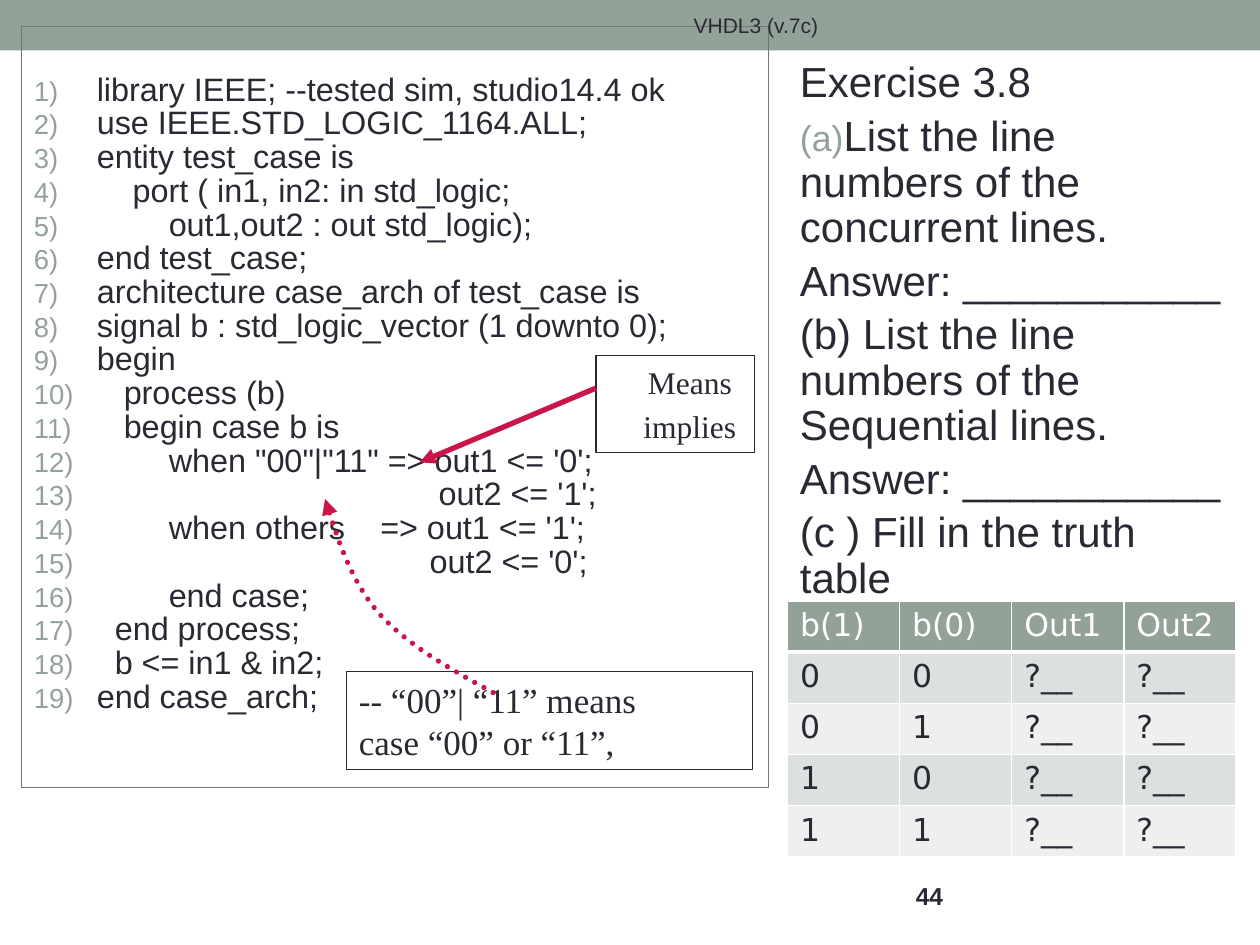
from lxml import etree
from pptx import Presentation
from pptx import util as u
from pptx.dml import color
from pptx.enum import dml, shapes, text
from pptx.oxml import ns

INK, SAGE, RED, WHITE = "292934", "93A299", "CB1549", "FFFFFF"
SPACE = 0.0714
CODE = [
    (0, "library IEEE; --tested sim, studio14.4 ok"),
    (0, "use IEEE.STD_LOGIC_1164.ALL;"),
    (0, "entity test_case is"),
    (4, "port ( in1, in2: in std_logic;"),
    (8, "out1,out2 : out std_logic);"),
    (0, "end test_case;"),
    (0, "architecture case_arch of test_case is"),
    (0, "signal b : std_logic_vector (1 downto 0);"),
    (0, "begin"),
    (3, "process (b)"),
    (3, "begin case b is"),
    (8, "when \"00\"|\"11\" => out1 <= '0';"),
    (38, "out2 <= '1';"),
    (8, "when others\t=> out1 <= '1';"),
    (37, "out2 <= '0';"),
    (8, "end case;"),
    (2, "end process;"),
    (2, "b <= in1 & in2;"),
    (0, "end case_arch;"),
]
EXERCISE = [
    "Exercise 3.8",
    "List the line numbers of the concurrent lines.",
    "Answer: ___________",
    "(b) List the line numbers of the Sequential lines.",
    "Answer: ___________",
    "(c ) Fill in the truth table",
]
TRUTH = [["b(1)", "b(0)", "Out1", "Out2"]] + [
    [b1, b0, "?__", "?__"] for b1 in "01" for b0 in "01"]
CURVES = [
    [(2.58, 3.96), (2.68, 4.28), (2.78, 4.6), (3, 4.86)],
    [(3, 4.86), (3.22, 5.11), (3.57, 5.31), (3.92, 5.5)],
]


def rgb(value):
    """Return a colour from a hex string."""
    return color.RGBColor.from_string(value)


def add_xml(parent, tag, **attrs):
    """Append a DrawingML element and return it."""
    return etree.SubElement(parent, ns.qn(tag), attrs)


def add_box(s, at, fill=None, line=None):
    """Add a rectangle with optional fill and outline."""
    sp = s.shapes.add_shape(shapes.MSO_SHAPE.RECTANGLE, *map(u.Inches, at))
    sp.shadow.inherit = False
    if fill:
        sp.fill.solid()
        sp.fill.fore_color.rgb = rgb(fill)
    else:
        sp.fill.background()
    if line:
        sp.line.color.rgb = rgb(line)
        sp.line.width = u.Pt(0.75)
    else:
        sp.line.fill.background()
    return sp


def add_text(s, at, anchor=text.MSO_ANCHOR.TOP):
    """Add a wrapping text box."""
    sp = s.shapes.add_textbox(*map(u.Inches, at))
    sp.text_frame.word_wrap = True
    sp.text_frame.vertical_anchor = anchor
    return sp


def add_run(p, words, size, font="Arial", ink=INK, bold=False):
    """Add one formatted run to a paragraph."""
    r = p.add_run()
    r.text = words
    r.font.size = u.Pt(size)
    r.font.name = font
    r.font.bold = bold
    r.font.color.rgb = rgb(ink)


def add_paragraphs(tf, lines, size, font="Arial", align=text.PP_ALIGN.LEFT,
                   spacing=None, before=0):
    """Write one paragraph per line and return them."""
    paragraphs = []
    for i, words in enumerate(lines):
        p = tf.add_paragraph() if i else tf.paragraphs[0]
        p.alignment = align
        p.space_before = u.Pt(before)
        if spacing:
            p.line_spacing = spacing
        add_run(p, words, size, font)
        paragraphs.append(p)
    return paragraphs


def number(p, scheme, margin=0, hang=0, tab=None):
    """Give a paragraph an automatic number and its indents."""
    pPr = p._p.get_or_add_pPr()
    pPr.set("marL", str(u.Inches(margin)))
    pPr.set("indent", str(u.Inches(-hang)))
    add_xml(add_xml(pPr, "a:buClr"), "a:srgbClr", val=SAGE)
    add_xml(pPr, "a:buSzPct", val="85000")
    add_xml(pPr, "a:buFont", typeface="Arial")
    add_xml(pPr, "a:buAutoNum", type=scheme)
    if tab:
        add_xml(add_xml(pPr, "a:tabLst"), "a:tab",
                pos=str(u.Inches(tab)), algn="l")


def style_arrow(sp, end):
    """Make a line red and thick with a triangle at one end."""
    sp.line.color.rgb = rgb(RED)
    sp.line.width = u.Pt(3)
    ln = sp.line._get_or_add_ln()
    if end == "a:headEnd":
        sp.line.dash_style = dml.MSO_LINE.ROUND_DOT
        ln.set("cap", "rnd")
    add_xml(ln, end, type="triangle")


def add_code(s):
    """Add the numbered program listing."""
    tf = add_box(s, (0.17, 0.21, 5.93, 6.04), line="6D7871").text_frame
    tf.word_wrap = True
    tf.vertical_anchor = text.MSO_ANCHOR.TOP
    tf.margin_top = u.Inches(0.42)
    lines = [words for _, words in CODE]
    paragraphs = add_paragraphs(tf, lines, 18.5, spacing=0.7, before=3.7)
    for p, (spaces, words) in zip(paragraphs, CODE):
        margin = 0.5 + spaces * SPACE
        number(p, "arabicParenR", margin, margin, 2.75 if "\t" in words else None)


def add_exercise(s):
    """Add the questions on the right."""
    tf = add_text(s, (6.25, 0.44, 3.58, 4.95)).text_frame
    paragraphs = add_paragraphs(tf, EXERCISE, 24, spacing=0.9, before=4.8)
    number(paragraphs[1], "alphaLcParenBoth")


def add_callout(s, at, lines, size, **layout):
    """Add an outlined note in a serif font."""
    tf = add_box(s, at, line=INK).text_frame
    tf.word_wrap = True
    tf.vertical_anchor = text.MSO_ANCHOR.MIDDLE
    add_paragraphs(tf, lines, size, "Times New Roman", **layout)
    return tf


def add_arrow(s, start, end):
    """Add a straight arrow."""
    sp = s.shapes.add_connector(shapes.MSO_CONNECTOR.STRAIGHT,
                                *map(u.Inches, start + end))
    style_arrow(sp, "a:tailEnd")
    add_xml(sp._element.spPr, "a:effectLst")


def bezier(curve, t):
    """Return the point at t on a cubic curve."""
    weights = ((1 - t) ** 3, 3 * t * (1 - t) ** 2, 3 * t * t * (1 - t), t ** 3)
    return tuple(u.Inches(sum(w * pt[i] for w, pt in zip(weights, curve)))
                 for i in (0, 1))


def add_dotted_curve(s):
    """Add the dotted curve that points at the choice bar."""
    points = [bezier(curve, k / 12) for curve in CURVES for k in range(13)]
    builder = s.shapes.build_freeform(*points[0])
    builder.add_line_segments(points[1:], close=False)
    sp = builder.convert_to_shape()
    sp.shadow.inherit = False
    sp.fill.background()
    style_arrow(sp, "a:headEnd")


def add_truth_table(s):
    """Add the truth table with white rules."""
    tbl = s.shapes.add_table(5, 4, *map(u.Inches, (6.25, 4.77, 3.56, 2.03))).table
    for i, row in enumerate(TRUTH):
        for j, words in enumerate(row):
            cell = tbl.cell(i, j)
            add_run(cell.text_frame.paragraphs[0], words, 18, "DejaVu Sans",
                    INK if i else WHITE)
            tcPr = cell._tc.get_or_add_tcPr()
            for side in "LRTB":
                thick = (i, side) == (0, "B")
                ln = add_xml(tcPr, f"a:ln{side}", w=str(u.Pt(3 if thick else 1)))
                add_xml(add_xml(ln, "a:solidFill"), "a:srgbClr", val=WHITE)
            cell.fill.solid()
            cell.fill.fore_color.rgb = rgb(
                SAGE if i == 0 else "DCE0DE" if i % 2 else "EEF0EF")


def main():
    """Build the slide and save it."""
    prs = Presentation()
    prs.slide_width, prs.slide_height = u.Inches(10), u.Inches(7.5)
    s = prs.slides.add_slide(prs.slide_layouts[6])
    middle, center = text.MSO_ANCHOR.MIDDLE, text.PP_ALIGN.CENTER
    add_box(s, (0, 0, 10, 0.4), fill=SAGE)
    add_code(s)
    add_exercise(s)
    header = add_text(s, (3.75, 0.02, 4.5, 0.36), middle)
    add_paragraphs(header.text_frame, ["VHDL3 (v.7c)"], 12, align=center)
    page = add_text(s, (7.17, 6.91, 2.33, 0.4), middle)
    add_run(page.text_frame.paragraphs[0], "44", 14, bold=True)
    means = add_callout(s, (4.73, 2.82, 1.26, 0.77), ["Means", "implies"], 18,
                        align=center, before=4)
    means.margin_left = u.Inches(0.33)
    add_arrow(s, (4.73, 3.08), (3.33, 3.67))
    add_callout(s, (2.75, 5.33, 3.22, 0.78),
                ["-- “00”| “11” means", "case “00” or “11”,"], 20)
    add_dotted_curve(s)
    add_truth_table(s)
    prs.save("out.pptx")


if __name__ == "__main__":
    main()
